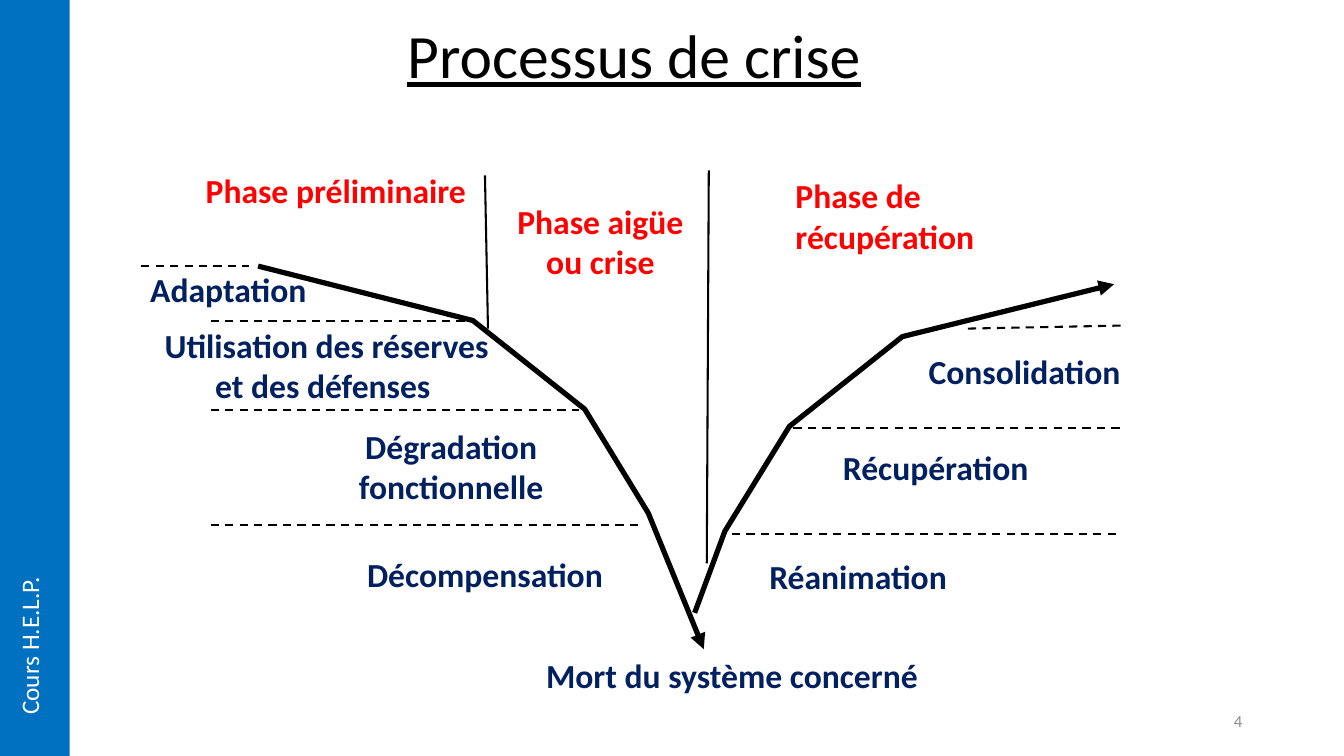
from pptx import Presentation
from pptx.dml.color import RGBColor
from pptx.enum.dml import MSO_LINE
from pptx.enum.shapes import MSO_CONNECTOR, MSO_SHAPE
from pptx.enum.text import MSO_ANCHOR, PP_ALIGN
from pptx.oxml.ns import qn
from pptx.util import Inches, Pt
from lxml.etree import SubElement

FONT = "Calibri"
BLACK, WHITE, GREY = "000000", "FFFFFF", "8C8C8C"
NAVY, RED, BLUE = "002060", "FF0000", "0070C0"
LEFT, CENTER, RIGHT = PP_ALIGN.LEFT, PP_ALIGN.CENTER, PP_ALIGN.RIGHT
TOP, MIDDLE = MSO_ANCHOR.TOP, MSO_ANCHOR.MIDDLE

STAGE_LIMITS = [
    ((1.4, 2.64), (2.47, 2.64)),
    ((2.09, 3.18), (4.63, 3.18)),
    ((2.09, 4.07), (5.74, 4.07)),
    ((2.09, 5.21), (6.34, 5.21)),
    ((9.6, 3.26), (11.12, 3.23)),
    ((7.87, 4.25), (11.12, 4.25)),
    ((7.26, 5.3), (11.12, 5.3)),
]
PHASE_LIMITS = [((4.84, 3.26), (4.81, 1.74)), ((7.01, 5.59), (7.03, 1.69))]
DECLINE = [(2.56, 2.64), (4.69, 3.18), (5.8, 4.06), (6.43, 5.09), (6.98, 6.44)]
RECOVERY = [(6.89, 6.08), (7.19, 5.27), (7.83, 4.23), (8.95, 3.34), (11.05, 2.82)]

LABELS = [
    ("Phase préliminaire", (2.04, 1.69, 2.64, 0.44), RED, LEFT, TOP),
    ("Phase aigüe ou crise", (5.07, 1.89, 1.77, 1), RED, CENTER, MIDDLE),
    ("Phase de récupération", (7.89, 1.74, 2.6, 0.44), RED, LEFT, TOP),
    ("Adaptation", (1.49, 2.67, 1.97, 0.19), NAVY, LEFT, TOP),
    ("Utilisation des réserves et des défenses ", (1.49, 3.27, 3.5, 0.7),
     NAVY, CENTER, MIDDLE),
    ("Dégradation fonctionnelle", (3.41, 4.39, 2.13, 0.47), NAVY, CENTER, MIDDLE),
    ("Décompensation", (3.64, 5.5, 2.49, 0.23), NAVY, LEFT, TOP),
    ("Mort du système concerné", (5.11, 6.5, 4.3, 0.44), NAVY, CENTER, TOP),
    ("Réanimation", (7.63, 5.51, 2.56, 0.51), NAVY, LEFT, TOP),
    ("Récupération", (8.36, 4.43, 2.18, 0.26), NAVY, LEFT, TOP),
    ("Consolidation", (9.21, 3.48, 2.3, 0.55), NAVY, LEFT, TOP),
]


def rgb(color):
    return RGBColor.from_string(color)


def inches(values):
    return [Inches(v) for v in values]


def write(tf, text, size, color, bold=False, align=LEFT, anchor=TOP):
    """Set the text of a frame and format its only paragraph."""
    tf.text = text
    tf.vertical_anchor = anchor
    p = tf.paragraphs[0]
    p.alignment = align
    font = p.runs[0].font
    font.name, font.size, font.bold = FONT, Pt(size), bold
    font.color.rgb = rgb(color)
    return p


def add_title(s, text):
    title = s.shapes.title
    title.left, title.top, title.width, title.height = inches((2.04, -0.29, 8.5, 1.25))
    p = write(title.text_frame, text, 44, BLACK, align=CENTER, anchor=MSO_ANCHOR.BOTTOM)
    p.line_spacing = 0.9
    p.runs[0].font.underline = True


def add_text(s, text, box, size, color, wrap=True, **style):
    tf = s.shapes.add_textbox(*inches(box)).text_frame
    tf.word_wrap = wrap
    write(tf, text, size, color, **style)
    return tf


def add_label(s, text, box, color, align, anchor):
    tf = add_text(s, text, box, 24, color, bold=True, align=align, anchor=anchor)
    tf.margin_left = tf.margin_top = tf.margin_right = tf.margin_bottom = 0


def add_line(s, start, end, dashed=False):
    line = s.shapes.add_connector(
        MSO_CONNECTOR.STRAIGHT, *inches(start), *inches(end))
    line.line.color.rgb = rgb(BLACK)
    line.line.width = Pt(1.48)
    if dashed:
        line.line.dash_style = MSO_LINE.DASH
    SubElement(line._element.spPr, qn("a:effectLst"))


def add_curve(s, points):
    """Draw an open broken line that ends in an arrowhead."""
    start, *rest = [inches(point) for point in points]
    builder = s.shapes.build_freeform(*start)
    builder.add_line_segments(rest, close=False)
    sp = builder.convert_to_shape()
    sp.shadow.inherit = False
    sp.fill.background()
    sp.line.color.rgb = rgb(BLACK)
    sp.line.width = Pt(3.71)
    SubElement(sp.line._get_or_add_ln(), qn("a:tailEnd"), type="triangle")


def add_side_band(s, text):
    band = s.shapes.add_shape(MSO_SHAPE.RECTANGLE, *inches((0, 0, 0.69, 7.5)))
    band.shadow.inherit = False
    band.fill.solid()
    band.fill.fore_color.rgb = rgb(BLUE)
    band.line.fill.background()
    tf = add_text(s, text, (0.09, 5.61, 0.5, 1.58), 18, WHITE, wrap=False)
    tf._txBody.bodyPr.set("vert", "vert270")


def main():
    prs = Presentation()
    prs.slide_width, prs.slide_height = Inches(13.33), Inches(7.5)
    s = prs.slides.add_slide(prs.slide_layouts[5])

    add_title(s, "Processus de crise")
    for start, end in STAGE_LIMITS:
        add_line(s, start, end, dashed=True)
    for start, end in PHASE_LIMITS:
        add_line(s, start, end)
    for label in LABELS:
        add_label(s, *label)
    for points in (RECOVERY, DECLINE):
        add_curve(s, points)
    add_side_band(s, "Cours H.E.L.P.")
    add_text(s, "4", (9.42, 6.95, 3, 0.4), 12, GREY, align=RIGHT, anchor=MIDDLE)

    prs.save("out.pptx")


if __name__ == "__main__":
    main()
